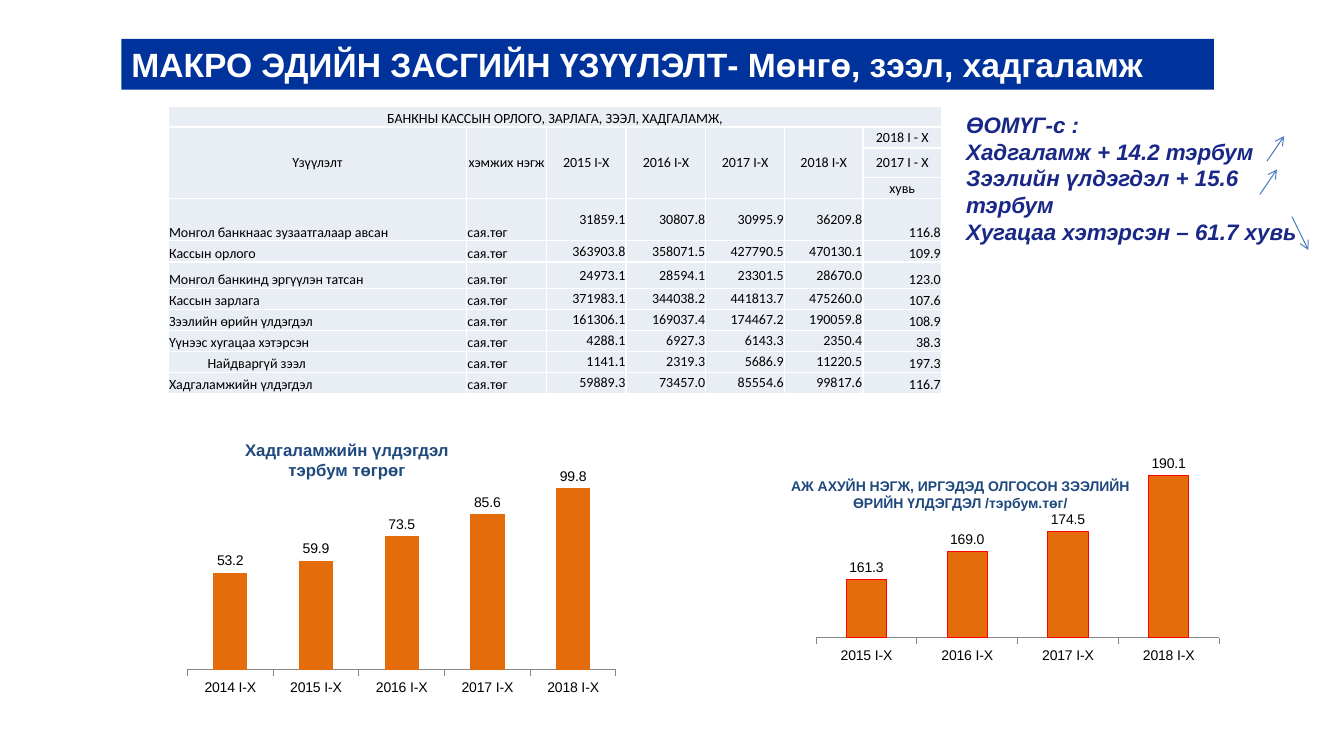
from lxml import etree
from pptx import Presentation
from pptx import util as u
from pptx.chart.data import CategoryChartData
from pptx.dml.color import RGBColor
from pptx.enum import chart as ch, shapes, text
from pptx.oxml import parse_xml
from pptx.oxml.ns import nsdecls, qn

HEADLINE = "МАКРО ЭДИЙН ЗАСГИЙН ҮЗҮҮЛЭЛТ- Мөнгө, зээл, хадгаламж"
SUMMARY = [
    "ӨОМҮГ-с :",
    "Хадгаламж + 14.2 тэрбум",
    "Зээлийн үлдэгдэл + 15.6 тэрбум",
    "Хугацаа хэтэрсэн – 61.7 хувь",
]
TRENDS = [
    (31.93, 4.06, 32.36, 3.43),
    (31.75, 4.9, 32.18, 4.27),
    (32.56, 5.46, 32.97, 6.3),
]
TABLE_TITLE = "БАНКНЫ КАССЫН ОРЛОГО, ЗАРЛАГА, ЗЭЭЛ, ХАДГАЛАМЖ,"
HEADINGS = ["Үзүүлэлт", "хэмжих нэгж", "2015 I-X", "2016 I-X", "2017 I-X", "2018 I-X"]
RATIO = ["2018 I - X", "2017 I - X", "хувь"]
UNIT = "сая.төг"
SUBITEM = "Найдваргүй зээл"
INDICATORS = [
    ("Монгол банкнаас зузаатгалаар авсан", "31859.1", "30807.8", "30995.9", "36209.8", "116.8"),
    ("Кассын орлого", "363903.8", "358071.5", "427790.5", "470130.1", "109.9"),
    ("Монгол банкинд эргүүлэн татсан", "24973.1", "28594.1", "23301.5", "28670.0", "123.0"),
    ("Кассын зарлага", "371983.1", "344038.2", "441813.7", "475260.0", "107.6"),
    ("Зээлийн өрийн үлдэгдэл", "161306.1", "169037.4", "174467.2", "190059.8", "108.9"),
    ("Үүнээс хугацаа хэтэрсэн", "4288.1", "6927.3", "6143.3", "2350.4", "38.3"),
    (SUBITEM, "1141.1", "2319.3", "5686.9", "11220.5", "197.3"),
    ("Хадгаламжийн үлдэгдэл", "59889.3", "73457.0", "85554.6", "99817.6", "116.7"),
]
COLUMN_WIDTHS = [7.52, 2.01, 2.01, 2.01, 1.98, 1.98, 1.98]
ROW_HEIGHTS = [0.53, 0.53, 0.74, 0.53, 1.07, 0.53, 0.66] + [0.53] * 5
BALANCES = [
    dict(caption=["Хадгаламжийн үлдэгдэл", "тэрбум төгрөг"], caption_size="savings",
         caption_at=(2.74, 10.95, 12.01, 2.34), at=(4.5, 11.25, 11.25, 6.4),
         years=["2014 I-X", "2015 I-X", "2016 I-X", "2017 I-X", "2018 I-X"],
         values=[53.2, 59.9, 73.5, 85.6, 99.8], limits=(0, 120),
         plot=(0.02, 0.02, 0.96, 0.86), outline=None),
    dict(caption=["АЖ АХУЙН НЭГЖ, ИРГЭДЭД ОЛГОСОН ЗЭЭЛИЙН", "ӨРИЙН ҮЛДЭГДЭЛ /тэрбум.төг/"],
         caption_size="loans", caption_at=(17.85, 11.9, 12.7, 1.85), at=(19.48, 10.46, 12.09, 7.29),
         years=["2015 I-X", "2016 I-X", "2017 I-X", "2018 I-X"],
         values=[161.3, 169, 174.5, 190.1], limits=(145, 195),
         plot=(0.09, 0.15, 0.84, 0.62), outline="outline"),
]
THEME = {
    "font": "Arial", "table_font": "Calibri",
    "color": dict(band="00329B", white="FFFFFF", summary="192887", arrow="4B7EBC",
                  caption="1F497D", black="000000", cell="E9EDF4", bar="E46C0A",
                  outline="FF0000", axis="868686"),
    "size": dict(headline=24, summary=16, savings=12, loans=10, table=10, chart=10),
}
ALIGN, ANCHOR = text.PP_ALIGN, text.MSO_ANCHOR


def color(name):
    return RGBColor.from_string(THEME["color"][name])


def box(values):
    return [u.Cm(v) for v in values]


def style(font, size, ink, face="font", bold=None, italic=None):
    font.name, font.size = THEME[face], u.Pt(THEME["size"][size])
    font.color.rgb = color(ink)
    font.bold, font.italic = bold, italic


def write(frame, lines, align, size, ink, italic=None):
    frame.text = "\n".join(lines)
    for line in frame.paragraphs:
        line.alignment = align
        style(line.runs[0].font, size, ink, bold=True, italic=italic)


def fill_cell(cell, words, align, anchor, indent=0):
    cell.fill.solid()
    cell.fill.fore_color.rgb = color("cell")
    cell.margin_left = cell.margin_right = cell.margin_top = u.Cm(0.02)
    cell.margin_bottom = 0
    cell.vertical_anchor = anchor
    line = cell.text_frame.paragraphs[0]
    line.text, line.alignment = words, align
    if indent:
        line._p.get_or_add_pPr().set("marL", str(u.Cm(indent)))
    for run in line.runs:
        style(run.font, "table", "black", "table_font")
    props = cell._tc.get_or_add_tcPr()
    for place, side in enumerate(("lnL", "lnR", "lnT", "lnB")):
        props.insert(place, parse_xml(
            f'<a:{side} {nsdecls("a")} w="12700"><a:solidFill>'
            f'<a:srgbClr val="{THEME["color"]["white"]}"/></a:solidFill></a:{side}>'))


def add_indicators(slide):
    frame = slide.shapes.add_table(
        len(ROW_HEIGHTS), len(COLUMN_WIDTHS),
        *box((4.24, 2.67, sum(COLUMN_WIDTHS), sum(ROW_HEIGHTS))))
    table = frame.table
    for column, width in zip(table.columns, COLUMN_WIDTHS):
        column.width = u.Cm(width)
    for row, height in zip(table.rows, ROW_HEIGHTS):
        row.height = u.Cm(height)

    last = len(HEADINGS)
    grid = [[TABLE_TITLE] + [""] * last, HEADINGS + RATIO[:1]]
    grid += [[""] * last + [part] for part in RATIO[1:]]
    grid += [[name, UNIT, *numbers] for name, *numbers in INDICATORS]
    head_rows = 1 + len(RATIO)
    for r, words in enumerate(grid):
        for c, word in enumerate(words):
            if r < head_rows:
                align, anchor = ALIGN.CENTER, ANCHOR.MIDDLE if r else ANCHOR.BOTTOM
            else:
                align = ALIGN.LEFT if c < 2 else ALIGN.RIGHT
                anchor = ANCHOR.MIDDLE if 2 <= c < last else ANCHOR.BOTTOM
            fill_cell(table.cell(r, c), word, align, anchor, 0.97 if word == SUBITEM else 0)
    table.cell(0, 0).merge(table.cell(0, last))
    for c in range(last):
        table.cell(1, c).merge(table.cell(len(RATIO), c))


def clear_backgrounds(chart):
    clear = f'<c:spPr {nsdecls("c", "a")}><a:noFill/><a:ln><a:noFill/></a:ln></c:spPr>'
    body = chart._chartSpace.find(qn("c:chart"))
    body.addnext(parse_xml(clear))
    body.find(qn("c:plotArea")).append(parse_xml(clear))


def place_plot(chart, plot):
    area = chart._chartSpace.find(qn("c:chart")).find(qn("c:plotArea"))
    for old in area.findall(qn("c:layout")):
        area.remove(old)
    layout = etree.Element(qn("c:layout"))
    manual = etree.SubElement(layout, qn("c:manualLayout"))
    settings = [("layoutTarget", "inner"), ("xMode", "edge"), ("yMode", "edge")]
    for tag, value in settings + list(zip("xywh", plot)):
        etree.SubElement(manual, qn(f"c:{tag}")).set("val", str(value))
    area.insert(0, layout)


def add_balance(slide, balance):
    data = CategoryChartData(number_format="0.0")
    data.categories = balance["years"]
    data.add_series("Series 1", balance["values"])
    chart = slide.shapes.add_chart(
        ch.XL_CHART_TYPE.COLUMN_CLUSTERED, *box(balance["at"]), data).chart
    chart.has_title = chart.has_legend = False
    style(chart.font, "chart", "black")
    years, amounts = chart.category_axis, chart.value_axis
    years.major_tick_mark = ch.XL_TICK_MARK.OUTSIDE
    years.has_major_gridlines = amounts.has_major_gridlines = False
    years.format.line.color.rgb = color("axis")
    years.format.line.width = u.Pt(0.75)
    amounts.minimum_scale, amounts.maximum_scale = balance["limits"]
    amounts.visible = False
    bars = chart.plots[0]
    bars.gap_width, bars.vary_by_categories = 150, False
    bars.has_data_labels = True
    labels = bars.data_labels
    labels.show_value = True
    labels.number_format, labels.number_format_is_linked = "0.0", False
    labels.position = ch.XL_LABEL_POSITION.OUTSIDE_END
    look = bars.series[0].format
    look.fill.solid()
    look.fill.fore_color.rgb = color("bar")
    if balance["outline"]:
        look.line.color.rgb = color(balance["outline"])
        look.line.width = u.Pt(0.75)
    place_plot(chart, balance["plot"])
    clear_backgrounds(chart)


def add_trend(slide, ends):
    arrow = slide.shapes.add_connector(shapes.MSO_CONNECTOR.STRAIGHT, *box(ends))
    arrow.line.color.rgb = color("arrow")
    arrow.line.width = u.Pt(0.75)
    etree.SubElement(arrow.line._get_or_add_ln(), qn("a:tailEnd")).set("type", "arrow")
    etree.SubElement(arrow._element.spPr, qn("a:effectLst"))


def main():
    deck = Presentation()
    deck.slide_width, deck.slide_height = u.Cm(33.87), u.Cm(19.05)
    slide = deck.slides.add_slide(deck.slide_layouts[6])

    band = slide.shapes.add_shape(shapes.MSO_SHAPE.RECTANGLE, *box((3.06, 0.98, 27.53, 1.28)))
    band.shadow.inherit = False
    band.fill.solid()
    band.fill.fore_color.rgb = color("band")
    band.line.fill.background()
    band.text_frame.vertical_anchor = ANCHOR.MIDDLE
    write(band.text_frame, [HEADLINE], ALIGN.JUSTIFY, "headline", "white")

    summary = slide.shapes.add_textbox(*box((24.1, 2.67, 9.14, 3.68))).text_frame
    summary.word_wrap = True
    write(summary, SUMMARY, ALIGN.LEFT, "summary", "summary", italic=True)
    for ends in TRENDS:
        add_trend(slide, ends)

    for balance in BALANCES:
        caption = slide.shapes.add_textbox(*box(balance["caption_at"])).text_frame
        caption.word_wrap = True
        write(caption, balance["caption"], ALIGN.CENTER, balance["caption_size"], "caption")
    add_indicators(slide)
    for balance in BALANCES:
        add_balance(slide, balance)
    deck.save("out.pptx")


if __name__ == "__main__":
    main()
